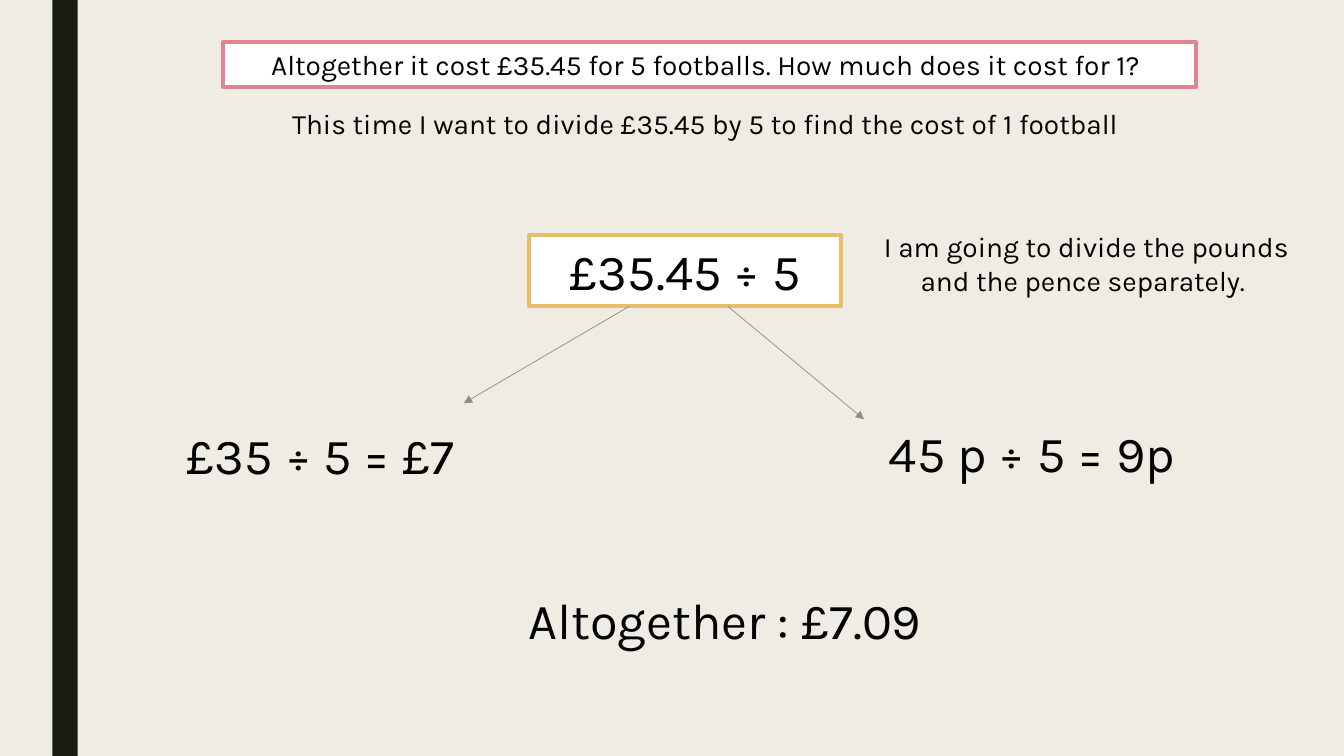
from lxml import etree
from pptx import Presentation
from pptx import util as u
from pptx.dml.color import RGBColor
from pptx.enum import shapes, text
from pptx.oxml.ns import qn

PX = 9144  # EMU per px, at 100 px to the inch


def px(*lengths):
    return [u.Emu(n * PX) for n in lengths]


def rgb(color):
    return RGBColor.from_string(color)


class SlideBuilder:
    font = "Karla"
    ink, paper, bar, arrow_color = "000000", "EFEDE3", "191B0E", "8C8D86"
    small, large = 20, 36

    def __init__(self, prs):
        self.slide = prs.slides.add_slide(prs.slide_layouts[5])
        fill = self.slide.background.fill
        fill.solid()
        fill.fore_color.rgb = rgb(self.paper)

    def set_text(self, sp, words, size):
        tf = sp.text_frame
        tf.text = words
        tf.word_wrap = True
        tf.auto_size = text.MSO_AUTO_SIZE.NONE
        tf.vertical_anchor = text.MSO_ANCHOR.TOP
        p = tf.paragraphs[0]
        p.alignment = text.PP_ALIGN.CENTER
        font = p.runs[0].font
        font.name, font.size = self.font, u.Pt(size)
        font.color.rgb = rgb(self.ink)

    def paint(self, sp, fill, line=None):
        sp.fill.solid()
        sp.fill.fore_color.rgb = rgb(fill)
        if line:
            sp.line.color.rgb = rgb(line)
            sp.line.width = u.Pt(2.75)
        else:
            sp.line.fill.background()

    def title(self, box, words, line):
        sp = self.slide.shapes.title
        sp.left, sp.top, sp.width, sp.height = px(*box)
        self.paint(sp, "FFFFFF", line)
        self.set_text(sp, words, self.small)

    def rect(self, box, fill, line=None):
        sp = self.slide.shapes.add_shape(shapes.MSO_SHAPE.RECTANGLE, *px(*box))
        sp.shadow.inherit = False
        self.paint(sp, fill, line)
        return sp

    def label(self, box, words, size):
        self.set_text(self.slide.shapes.add_textbox(*px(*box)), words, size)

    def arrow(self, *ends):
        connector = self.slide.shapes.add_connector(
            shapes.MSO_CONNECTOR.STRAIGHT, *px(*ends))
        connector.line.color.rgb = rgb(self.arrow_color)
        connector.line.width = u.Pt(0.5)
        sp_pr = connector._element.spPr
        etree.SubElement(sp_pr.find(qn("a:ln")), qn("a:tailEnd"),
                         type="triangle")
        etree.SubElement(sp_pr, qn("a:effectLst"))


def main():
    prs = Presentation()
    prs.slide_width, prs.slide_height = px(1333, 750)
    s = SlideBuilder(prs)

    # Side bar and question
    s.rect((52, 0, 25, 750), s.bar)
    s.title((221, 42, 965, 44),
            "Altogether it cost £35.45 for 5 footballs. "
            "How much does it cost for 1? ", "E28394")
    s.label((100, 101, 1206, 44),
            "This time I want to divide £35.45 by 5 "
            "to find the cost of 1 football ", s.small)

    # Calculation to split
    calculation = s.rect((525, 233, 309, 71), "FFFFFF", "E6C069")
    s.set_text(calculation, "£35.45 ÷ 5", s.large)
    s.label((849, 223, 457, 77),
            "I am going to divide the pounds and the pence separately. ",
            s.small)

    # Pounds and pence
    s.arrow(624, 304, 460, 400)
    s.label((158, 416, 320, 71), "£35 ÷ 5 = £7", s.large)
    s.arrow(722, 304, 857, 416)
    s.label((795, 414, 457, 71), "45 p ÷ 5 = 9p", s.large)

    # Answer
    s.label((338, 579, 762, 71), "Altogether : £7.09", s.large)

    prs.save("out.pptx")


if __name__ == "__main__":
    main()
